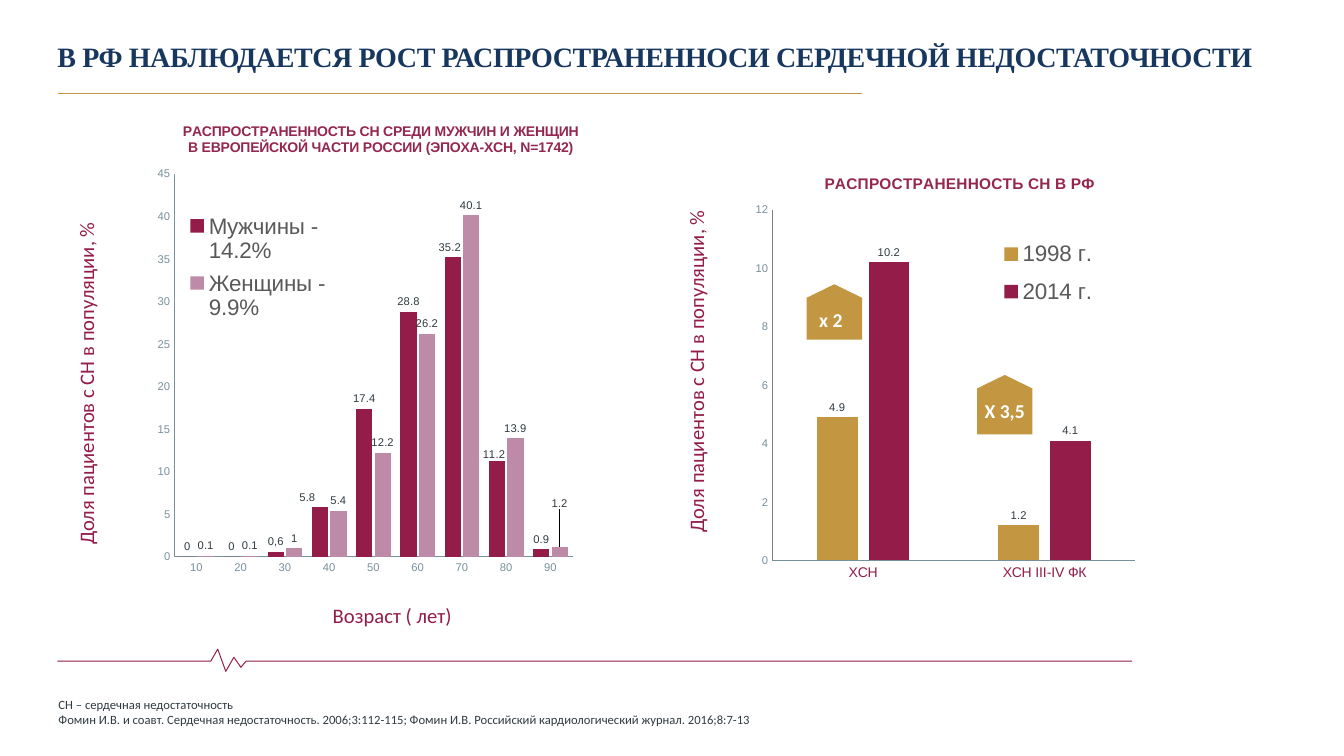
from lxml.etree import SubElement
from pptx import Presentation
from pptx.chart.data import CategoryChartData
from pptx.dml.color import RGBColor
from pptx.enum.chart import XL_CHART_TYPE, XL_LABEL_POSITION, XL_LEGEND_POSITION, XL_TICK_MARK
from pptx.enum.shapes import MSO_CONNECTOR, MSO_SHAPE
from pptx.enum.text import MSO_ANCHOR, PP_ALIGN
from pptx.oxml import parse_xml
from pptx.oxml.ns import nsdecls, qn
from pptx.util import Inches, Pt

COLORS = {
    "navy": "17375E", "gold": "C39741", "rule": "C39641", "wine": "931D48",
    "pulse": "921D47", "mauve": "BD8AA8", "heading": "95274E", "axis": "78909C",
    "gray": "808080", "legend": "595959", "ink": "2F3B41", "white": "FFFFFF",
}
SHARE = "Доля пациентов с СН в популяции, %"
AGE_CHART = {
    "box": (1.11, 1.13, 5, 5.08),
    "title": ["РАСПРОСТРАНЕННОСТЬ СН СРЕДИ МУЖЧИН И ЖЕНЩИН",
              "В ЕВРОПЕЙСКОЙ ЧАСТИ РОССИИ (ЭПОХА-ХСН, N=1742)"],
    "title_size": 10, "title_at": (0.135, 0.01),
    "categories": range(10, 100, 10), "category_font": (8, "axis"),
    "series": [
        ("Мужчины - 14.2%", (0, 0, 0.6, 5.8, 17.4, 28.8, 35.2, 11.2, 0.9), "wine"),
        ("Женщины - 9.9%", (0.1, 0.1, 1, 5.4, 12.2, 26.2, 40.1, 13.9, 1.2), "mauve"),
    ],
    "plot": (0.124, 0.117, 0.79, 0.748),
    "bars": {"gap_width": 59, "overlap": -13},
    "scale": {"minimum_scale": 0, "maximum_scale": 45, "major_unit": 5},
    "value_line": "axis",
    "legend": {"position": XL_LEGEND_POSITION.BOTTOM, "include_in_layout": False},
    "legend_at": (0.14, 0.18, 0.3, 0.24),
    "moved_labels": [(0, 3, (-0.025, 0)), (0, 6, (-0.006, 0)),
                     (0, 7, (-0.006, 0.006)), (1, 8, (0, -0.065))],
    "worded_labels": [(0, 2, "0,6")],
}
GROWTH_CHART = {
    "box": (7.34, 1.61, 4.05, 4.39),
    "title": ["РАСПРОСТРАНЕННОСТЬ СН В РФ"],
    "title_size": 11, "title_at": (0.2, 0.017),
    "categories": ["ХСН", "ХСН III-IV ФК"], "category_font": (10, "wine"),
    "series": [("1998 г.", (4.9, 1.2), "gold"), ("2014 г.", (10.2, 4.1), "wine")],
    "plot": (0.079, 0.107, 0.889, 0.793),
    "bars": {"gap_width": 219, "overlap": -27},
    "scale": {"minimum_scale": 0, "maximum_scale": 12, "major_unit": 2},
    "value_line": "gray",
    "legend": {"position": XL_LEGEND_POSITION.RIGHT, "include_in_layout": True},
    "legend_at": (0.62, 0.15, 0.27, 0.2),
    "moved_labels": [], "worded_labels": [],
}


def rgb(name):
    return RGBColor.from_string(COLORS[name])


def apply(target, values):
    for name, value in values.items():
        setattr(target, name, value)


def style_font(font, size, color, name="Arial", bold=False):
    apply(font, {"size": Pt(size), "name": name, "bold": bold})
    font.color.rgb = rgb(color)


def style_line(line, color, width):
    line.color.rgb = rgb(color)
    line.width = Pt(width)


def place(element, index, fractions, inner=False):
    """Give a chart part a manual layout: x, y and, if present, w, h."""
    for old in element.findall(qn("c:layout")):
        element.remove(old)
    layout = parse_xml(f"<c:layout {nsdecls('c')}><c:manualLayout/></c:layout>")
    if inner:
        SubElement(layout[0], qn("c:layoutTarget")).set("val", "inner")
    if len(fractions) == 4:
        for mode in ("c:xMode", "c:yMode"):
            SubElement(layout[0], qn(mode)).set("val", "edge")
    for side, fraction in zip("xywh", fractions):
        SubElement(layout[0], qn(f"c:{side}")).set("val", str(fraction))
    element.insert(index, layout)


def place_title(element, left, top):
    place(element, 1, (left, top))
    manual = element.find(qn("c:layout"))[0]
    for index, mode in enumerate(("c:xMode", "c:yMode")):
        edge = SubElement(manual, qn(mode))
        edge.set("val", "edge")
        manual.insert(index, edge)


def style_axis(axis, size, color, line_color):
    apply(axis, {"major_tick_mark": XL_TICK_MARK.NONE, "minor_tick_mark": XL_TICK_MARK.NONE,
                 "has_major_gridlines": False})
    style_font(axis.tick_labels.font, size, color)
    style_line(axis.format.line, line_color, 1)


def add_chart_title(chart, content):
    chart.has_title = True
    paragraph = chart.chart_title.text_frame.paragraphs[0]
    for index, line in enumerate(content["title"]):
        if index:
            paragraph.add_line_break()
        run = paragraph.add_run()
        run.text = line
        style_font(run.font, content["title_size"], "heading", bold=True)
    place_title(chart.chart_title._element, *content["title_at"])


def style_series(plot, content):
    for series, (_, _, color) in zip(plot.series, content["series"]):
        series.invert_if_negative = False
        series.format.fill.solid()
        series.format.fill.fore_color.rgb = rgb(color)
        labels = series.data_labels
        apply(labels, {"show_value": True, "position": XL_LABEL_POSITION.OUTSIDE_END})
        style_font(labels.font, 8, "ink")
    for series_index, point, shift in content["moved_labels"]:
        series = plot.series[series_index]
        label = series.points[point].data_label
        label.position = XL_LABEL_POSITION.OUTSIDE_END
        style_font(label.font, 8, "ink")
        element = series._element.xpath(f"c:dLbls/c:dLbl[c:idx/@val='{point}']")[0]
        place(element, 1, shift)
    for series_index, point, wording in content["worded_labels"]:
        label = plot.series[series_index].points[point].data_label
        run = label.text_frame.paragraphs[0].add_run()
        run.text = wording
        style_font(run.font, 8, "ink")
        label.position = XL_LABEL_POSITION.OUTSIDE_END


def add_column_chart(slide, content):
    data = CategoryChartData()
    data.categories = content["categories"]
    for name, values, _ in content["series"]:
        data.add_series(name, values)
    chart = slide.shapes.add_chart(
        XL_CHART_TYPE.COLUMN_CLUSTERED, *map(Inches, content["box"]), data).chart
    apply(chart.font, {"name": "Arial", "size": Pt(10)})
    add_chart_title(chart, content)
    plot = chart.plots[0]
    apply(plot, {"vary_by_categories": False, **content["bars"]})
    style_series(plot, content)
    style_axis(chart.category_axis, *content["category_font"], "axis")
    style_axis(chart.value_axis, 8, "axis", content["value_line"])
    apply(chart.value_axis, content["scale"])
    chart.has_legend = True
    apply(chart.legend, content["legend"])
    style_font(chart.legend.font, 16, "legend")
    place(chart.legend._element, 1, content["legend_at"])
    place(chart._chartSpace.find(".//" + qn("c:plotArea")), 0, content["plot"], inner=True)


def add_label(slide, box, lines, size, color, rotation=0, bold=False, align=PP_ALIGN.CENTER):
    label = slide.shapes.add_textbox(*map(Inches, box))
    label.rotation = rotation
    frame = label.text_frame
    frame.word_wrap = True
    for index, line in enumerate(lines):
        paragraph = frame.add_paragraph() if index else frame.paragraphs[0]
        paragraph.alignment = align
        run = paragraph.add_run()
        run.text = line
        style_font(run.font, size, color, "Calibri", bold)
    return frame


def add_growth_badge(slide, badge_box, label_box, wording):
    badge = slide.shapes.add_shape(MSO_SHAPE.PENTAGON, *map(Inches, badge_box))
    badge.shadow.inherit = False
    badge.rotation = 270
    badge.adjustments[0] = 0.244
    badge.fill.solid()
    badge.fill.fore_color.rgb = rgb("gold")
    badge.line.fill.background()
    add_label(slide, label_box, [wording], 14, "white", bold=True)


def add_pulse_line(slide):
    start, *beats = [(0.57, 6.56), (2.09, 6.56), (2.16, 6.44), (2.24, 6.66), (2.32, 6.52),
                     (2.39, 6.62), (2.44, 6.56), (11.23, 6.56)]
    builder = slide.shapes.build_freeform(*map(Inches, start))
    builder.add_line_segments([(Inches(x), Inches(y)) for x, y in beats], close=False)
    pulse = builder.convert_to_shape()
    pulse.shadow.inherit = False
    pulse.fill.background()
    style_line(pulse.line, "pulse", 0.7)


def add_title_rule(slide):
    rule = slide.shapes.add_connector(
        MSO_CONNECTOR.STRAIGHT, *map(Inches, (0.58, 0.93, 8.55, 0.93)))
    SubElement(rule._element.spPr, qn("a:effectLst"))
    style_line(rule.line, "rule", 0.7)


def fill_title(title, wording):
    apply(title, dict(zip(("left", "top", "width", "height"),
                          map(Inches, (0.55, 0.37, 12.55, 0.36)))))
    frame = title.text_frame
    apply(frame, {"margin_left": Inches(0.02), "margin_top": Inches(0.02), "margin_right": 0,
                  "margin_bottom": 0, "vertical_anchor": MSO_ANCHOR.MIDDLE, "word_wrap": True})
    frame.paragraphs[0].alignment = PP_ALIGN.LEFT
    run = frame.paragraphs[0].add_run()
    run.text = wording
    style_font(run.font, 20, "navy", "Times New Roman", True)
    run._r.get_or_add_rPr().set("spc", "-30")


def main():
    presentation = Presentation()
    apply(presentation, {"slide_width": Inches(13.33), "slide_height": Inches(7.5)})
    slide = presentation.slides.add_slide(presentation.slide_layouts[5])
    fill_title(slide.shapes.title,
               "В РФ НАБЛЮДАЕТСЯ РОСТ РАСПРОСТРАНЕННОСИ СЕРДЕЧНОЙ НЕДОСТАТОЧНОСТИ")
    add_pulse_line(slide)
    add_title_rule(slide)
    add_column_chart(slide, GROWTH_CHART)
    add_column_chart(slide, AGE_CHART)
    add_label(slide, (2.78, 5.93, 2.22, 0.35), ["Возраст ( лет)"], 14.7, "wine")
    for box in ((-1.23, 3.63, 4.17, 0.35), (4.8, 3.51, 4.21, 0.35)):
        add_label(slide, box, [SHARE], 14.7, "wine", rotation=270)
    add_growth_badge(slide, (8, 2.82, 0.55, 0.55), (7.77, 3.01, 0.94, 0.34), "х 2")
    add_growth_badge(slide, (9.67, 3.74, 0.59, 0.55), (9.61, 3.91, 0.71, 0.34), "Х 3,5")
    sources = add_label(slide, (0.58, 6.89, 9.01, 0.33), [
        "СН – сердечная недостаточность",
        "Фомин И.В. и соавт. Сердечная недостаточность. 2006;3:112-115; "
        "Фомин И.В. Российский кардиологический журнал. 2016;8:7-13",
    ], 9, "ink", align=PP_ALIGN.LEFT)
    apply(sources, {"margin_left": 0, "margin_top": Inches(0.02), "margin_right": 0,
                    "margin_bottom": 0})
    presentation.save("out.pptx")


if __name__ == "__main__":
    main()
